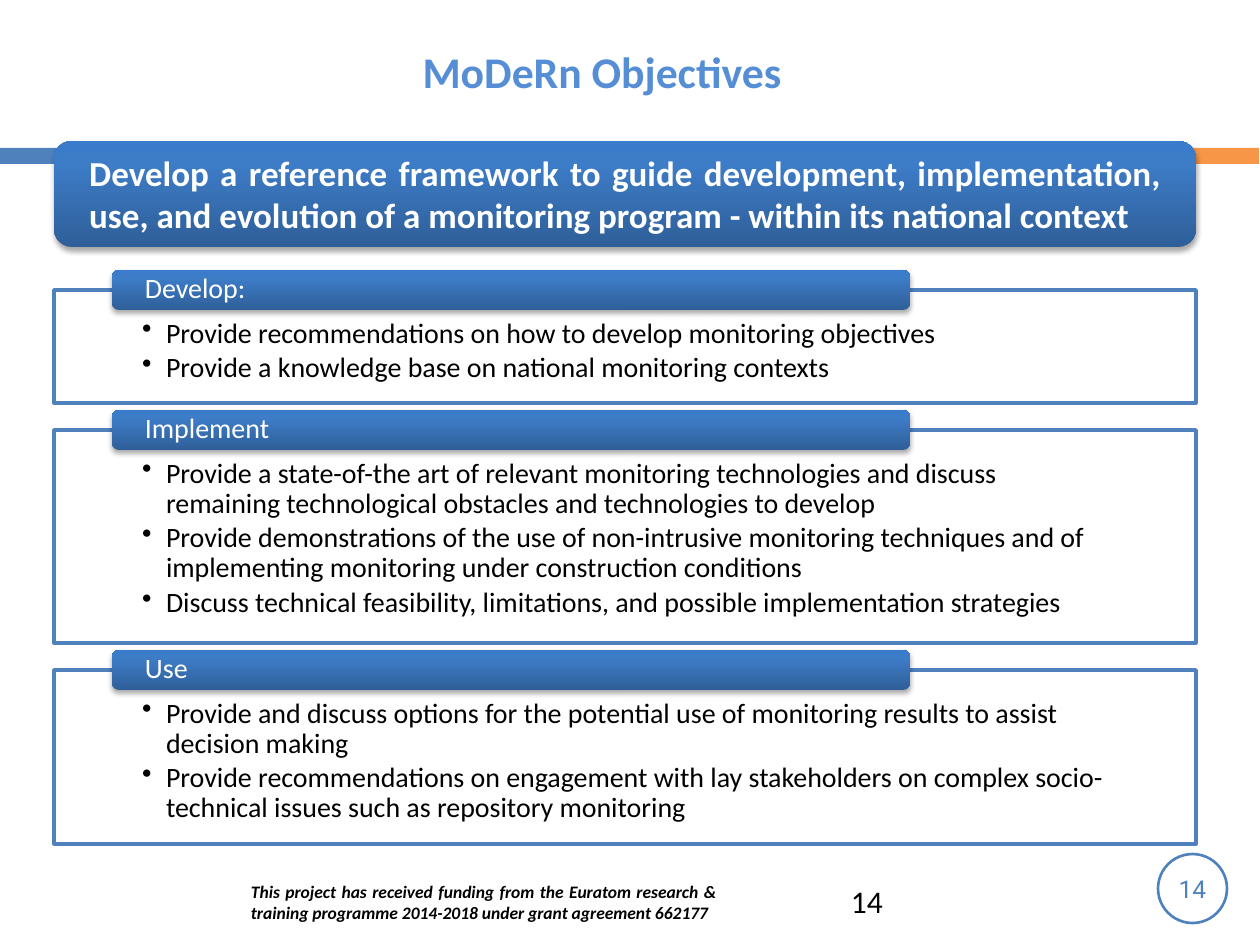
import pptx
import pptx.util
import pptx.oxml
import pptx.dml.color
import pptx.enum.shapes
import pptx.enum.text

THEME = {
    "blue": "4F81BD", "orange": "F79646", "title": "558ED5", "white": "FFFFFF", "black": "000000",
    "gradient": [(0, "2F5F99"), (80, "3D7CC7"), (100, "3A7CCB")],
    "font": "Calibri", "number_font": "Roboto",
    "title_size": 25, "headline_size": 20, "body_size": 16,
    "badge_size": 14, "page_size": 18, "funding_size": 10,
}
PX = pptx.util.Inches(1) / 126
NS = 'xmlns:a="http://schemas.openxmlformats.org/drawingml/2006/main"'
SHAPES = pptx.enum.shapes.MSO_SHAPE
ALIGN = pptx.enum.text.PP_ALIGN
ANCHOR = pptx.enum.text.MSO_ANCHOR

presentation = pptx.Presentation()
presentation.slide_width = round(1260 * PX)
presentation.slide_height = round(945 * PX)
slide = presentation.slides.add_slide(presentation.slide_layouts[6])


def add_part(kind, box, fill=None, line=None, width=2):
    left, top, wide, high = [round(value * PX) for value in box]
    if kind is None:
        return slide.shapes.add_textbox(left, top, wide, high)
    part = slide.shapes.add_shape(kind, left, top, wide, high)
    part.shadow.inherit = False
    if fill == "gradient":
        stops = "".join(f'<a:gs pos="{place * 1000}"><a:srgbClr val="{color}"/></a:gs>'
                        for place, color in THEME["gradient"])
        part._element.spPr.insert(2, pptx.oxml.parse_xml(
            f'<a:gradFill {NS} rotWithShape="1"><a:gsLst>{stops}</a:gsLst>'
            '<a:lin ang="16200000" scaled="0"/></a:gradFill>'))
        part._element.spPr.find(pptx.oxml.ns.qn("a:effectLst")).append(pptx.oxml.parse_xml(
            f'<a:outerShdw {NS} blurRad="40000" dist="23000" dir="5400000" rotWithShape="0">'
            '<a:srgbClr val="000000"><a:alpha val="35000"/></a:srgbClr></a:outerShdw>'))
    elif fill:
        part.fill.solid()
        part.fill.fore_color.rgb = pptx.dml.color.RGBColor.from_string(fill)
    else:
        part.fill.background()
    if line:
        part.line.color.rgb = pptx.dml.color.RGBColor.from_string(line)
        part.line.width = pptx.util.Pt(width)
    else:
        part.line.fill.background()
    return part


def write(part, text, size, color, insets=(13, 6, 13, 6), align=ALIGN.LEFT,
          anchor=ANCHOR.MIDDLE, bold=False, italic=False, font=THEME["font"]):
    frame = part.text_frame
    frame.word_wrap = True
    frame.vertical_anchor = anchor
    frame.margin_left, frame.margin_top, frame.margin_right, frame.margin_bottom = [
        round(inset * PX) for inset in insets]
    frame.text = text
    for paragraph in frame.paragraphs:
        paragraph.alignment = align
        for run in paragraph.runs:
            run.font.name = font
            run.font.size = pptx.util.Pt(THEME[size])
            run.font.bold = bold
            run.font.italic = italic
            run.font.color.rgb = pptx.dml.color.RGBColor.from_string(THEME[color])
    return frame.paragraphs


add_part(SHAPES.RECTANGLE, (1085, 148, 174, 16), THEME["orange"])
add_part(SHAPES.RECTANGLE, (0, 148, 1084, 16), THEME["blue"])

badge = add_part(SHAPES.OVAL, (1158, 854, 69, 69), line=THEME["blue"], width=1.5)
write(badge, "14", "badge_size", "blue", (1, 1, 1, 1), ALIGN.CENTER, font=THEME["number_font"])

funding = add_part(None, (238, 874, 491, 55))
write(funding, "This project has received funding from the Euratom research & training programme "
      "2014-2018 under grant agreement 662177",
      "funding_size", "black", align=ALIGN.JUSTIFY, bold=True, italic=True)

page_number = add_part(None, (838, 876, 294, 50))
write(page_number, "14", "page_size", "black", anchor=ANCHOR.TOP)

title = add_part(None, (35, 37, 1134, 67))
write(title, "MoDeRn Objectives", "title_size", "title", align=ALIGN.CENTER, bold=True)

headline = add_part(SHAPES.ROUNDED_RECTANGLE, (54, 141, 1142, 106), "gradient")
write(headline, "Develop a reference framework to guide development, implementation, use, and "
      "evolution of a monitoring program - within its national context",
      "headline_size", "white", (30, 0, 30, 0), ALIGN.JUSTIFY, bold=True)

objectives = [
    ("Develop:", 113, [
        "Provide recommendations on how to develop monitoring objectives",
        "Provide a knowledge base on national monitoring contexts",
    ]),
    ("Implement", 213, [
        "Provide a state-of-the art of relevant monitoring technologies and discuss remaining "
        "technological obstacles and technologies to develop",
        "Provide demonstrations of the use of non-intrusive monitoring techniques and of "
        "implementing monitoring under construction conditions",
        "Discuss technical feasibility, limitations, and possible implementation strategies",
    ]),
    ("Use", 174, [
        "Provide and discuss options for the potential use of monitoring results to assist "
        "decision making",
        "Provide recommendations on engagement with lay stakeholders on complex "
        "socio-technical issues such as repository monitoring",
    ]),
]
panel_top = 290
panel_gap = 27
for heading, panel_height, goals in objectives:
    panel = add_part(SHAPES.RECTANGLE, (54, panel_top, 1142, panel_height),
                     THEME["white"], THEME["blue"])
    for goal in write(panel, "\n".join(goals), "body_size", "black", (88, 29, 88, 15),
                      anchor=ANCHOR.TOP):
        properties = goal._p.get_or_add_pPr()
        properties.set("marL", str(round(24 * PX)))
        properties.set("indent", str(round(-24 * PX)))
        properties.append(pptx.oxml.parse_xml(f'<a:buChar {NS} char="•"/>'))
        goal.level = 1
        goal.line_spacing = 0.9
        goal.space_after = pptx.util.Pt(2.4)
    tab = add_part(SHAPES.ROUNDED_RECTANGLE, (112, panel_top - 20, 798, 40), "gradient")
    write(tab, heading, "body_size", "white", (31, 0, 31, 0))[0].line_spacing = 0.9
    panel_top += panel_height + panel_gap

presentation.save("out.pptx")
